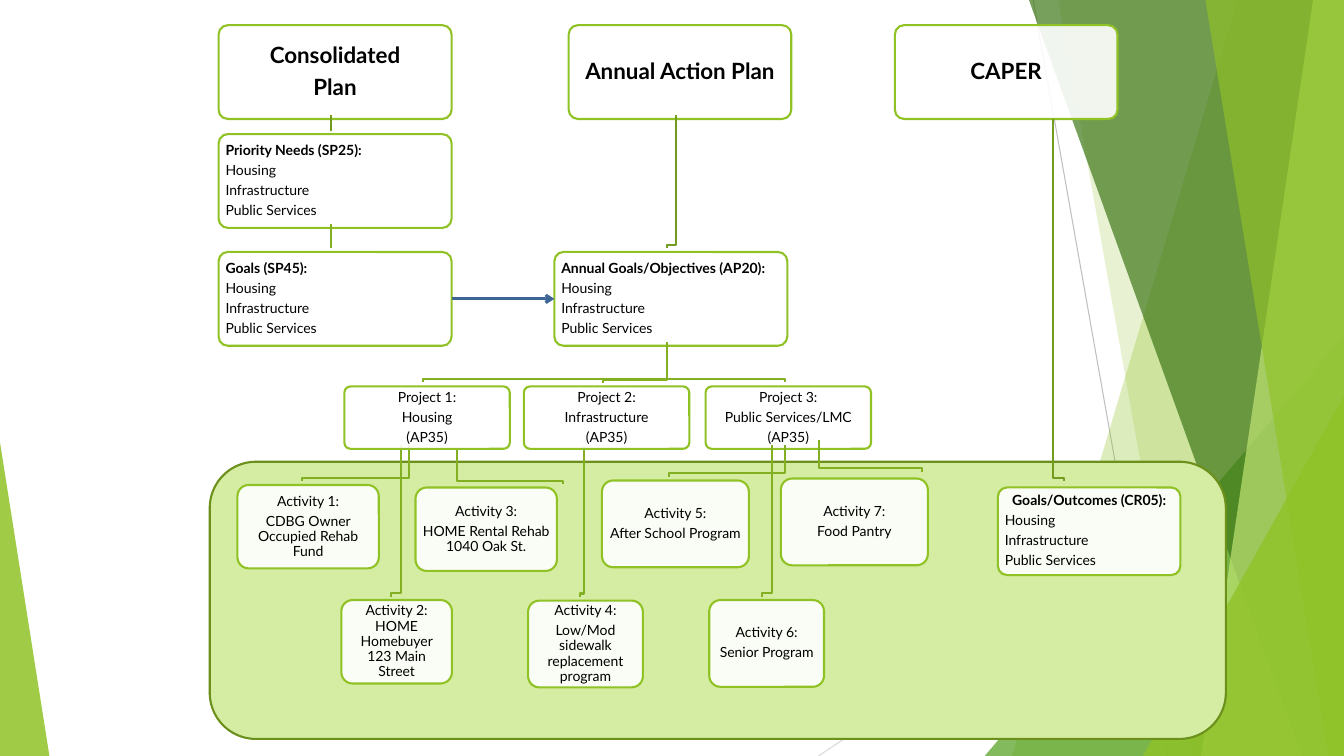
from pptx import Presentation
from pptx import util as u
from pptx.dml.color import RGBColor
from pptx.enum import shapes, text
from pptx.oxml import parse_xml
from pptx.oxml.ns import nsdecls
from lxml import etree

Pt = u.Pt
HUE = {"lime": "90C226", "leaf": "54A021", "pine": "3F7819", "pale": "C0E474",
       "panel": "D5EDA2", "rim": "6B901C", "stem": "739B1E", "twig": "83B022",
       "blue": "3D6696", "white": "FFFFFF", "ink": "000000",
       "gray": "BFBFBF", "mist": "D9D9D9"}
WIDE, HIGH = 960, 540

RAYS = [(738, 0, 833.8, 540, "gray"), (960, 290.2, 584.6, 540, "mist")]
# top x, bottom x | left, top, width, height, apex
FACETS = [((884, 723), "lime", 30), ((756, 852), "lime", 20),
          ((703.4, 239.8, 256.6, 300.2, 1), "leaf", 72),
          ((735, 930), "pine", 70), ((938, 858), "pale", 70), ((861, 949), "lime", 65),
          ((816.5, 283, 143.5, 257, 1), "lime", 80), ((0, 316, 35.3, 224, 0), "lime", 85)]
PANEL = (149.8, 329.8, 725.8, 198)

NEEDS = ["Housing", "Infrastructure", "Public Services"]
TITLES = [(156.2, 166.4, ["Consolidated", "Plan"]), (406.2, 159, ["Annual Action Plan"]),
          (639.2, 159, ["CAPER"])]
LISTS = [(156.2, 95.8, 166.4, 67, "Priority Needs (SP25):", "left"),
         (156.2, 180, 166.4, 67, "Goals (SP45):", "left"),
         (396, 180, 166.4, 67, "Annual Goals/Objectives (AP20):", "left"),
         (712.8, 348.2, 130.4, 62.6, "Goals/Outcomes (CR05):", "mid")]
PROJECTS = [(246, "Housing"), (374.2, "Infrastructure"), (504, "Public Services/LMC")]
ACTS = [(169.6, 346.4, 101, 59.6, ["Activity 1:", "CDBG Owner Occupied Rehab Fund"]),
        (243.8, 428.6, 79, 59.6, ["Activity 2: HOME Homebuyer 123 Main Street"]),
        (296.8, 348.2, 101, 59.6, ["Activity 3:", "HOME Rental Rehab 1040 Oak St."]),
        (377.2, 429, 82, 62, ["Activity 4:", "Low/Mod sidewalk replacement program"]),
        (430, 343.2, 105, 62, ["Activity 5:", "After School Program"]),
        (506.6, 428.6, 82, 62, ["Activity 6:", "Senior Program"]),
        (557.8, 341.8, 105, 62, ["Activity 7:", "Food Pantry"])]
UNDER = [(292, 318, 215.8, 343.6, "twig"), (286.4, 318, 279.4, 426.2, "twig"),
         (326.4, 320.6, 402, 345.8, "twig"), (417, 318.4, 414.2, 426.4, "twig")]
OVER = [(236.4, 82, 236.4, 93.6, "stem"), (236.4, 160, 236.4, 177.2, "twig"),
        (483, 82, 476.4, 177.4, "stem"), (476.4, 244.2, 430.8, 273.8, "twig"),
        (476.4, 244.2, 302.2, 273.2, "twig"), (476.4, 244.2, 560.6, 273.2, "twig"),
        (560.6, 317.6, 478, 340.6, "twig"), (551.4, 317.6, 544.2, 426.2, "twig"),
        (585, 314, 658.6, 337, "twig"), (752.2, 85, 760, 343.6, "stem")]

prs = Presentation()
prs.slide_width, prs.slide_height = Pt(WIDE), Pt(HIGH)
page = prs.slides.add_slide(prs.slide_layouts[6]).shapes


def rgb(name):
    return RGBColor.from_string(HUE[name])


def paint(shape, fill=None, alpha=100, line=None):
    shape.shadow.inherit = False
    if fill:
        shape.fill.solid()
        shape.fill.fore_color.rgb = rgb(fill)
        if alpha < 100:
            tone = shape.fill._xPr.find(".//{*}srgbClr")
            tone.append(parse_xml(f'<a:alpha {nsdecls("a")} val="{alpha * 1000}"/>'))
    else:
        shape.fill.background()
    if line:
        shape.line.color.rgb = rgb(line)
        shape.line.width = Pt(1.5)
    else:
        shape.line.fill.background()


def write(shape, lines, size=10, bold=False, head=False, align="mid", first=None, inset=3):
    frame = shape.text_frame
    frame.word_wrap = True
    frame.vertical_anchor = text.MSO_ANCHOR.MIDDLE
    frame.margin_left = frame.margin_right = Pt(inset)
    frame.margin_top = frame.margin_bottom = Pt(inset)
    sides = {"mid": text.PP_ALIGN.CENTER, "left": text.PP_ALIGN.LEFT}
    for i, words in enumerate(lines):
        para = frame.add_paragraph() if i else frame.paragraphs[0]
        para.alignment = sides[align if i or not first else first]
        para.line_spacing, para.space_after = 0.9, Pt(size * 0.35)
        run = para.add_run()
        run.text = words
        run.font.name, run.font.size = "Lato", Pt(size)
        run.font.bold = bold or (head and i == 0)
        run.font.color.rgb = rgb("ink")


def card(x, y, w, h, lines, curve=6.6, **style):
    box = page.add_shape(shapes.MSO_SHAPE.ROUNDED_RECTANGLE, Pt(x), Pt(y), Pt(w), Pt(h))
    box.adjustments[0] = curve / h
    paint(box, "white", 90, "lime")
    write(box, lines, **style)
    return box


def trace(dots, close):
    pts = [(Pt(x), Pt(y)) for x, y in dots]
    pen = page.build_freeform(*pts[0])
    pen.add_line_segments(pts[1:], close=close)
    return pen.convert_to_shape()


def straight(x, y, x2, y2, hue, width=1.5):
    line = page.add_connector(shapes.MSO_CONNECTOR.STRAIGHT, Pt(x), Pt(y), Pt(x2), Pt(y2))
    line.line.color.rgb, line.line.width = rgb(hue), Pt(width)
    line._element.spPr.append(parse_xml(f'<a:effectLst {nsdecls("a")}/>'))
    return line


def link(x, y, x2, y2, hue):
    if x == x2:
        straight(x, y, x2, y2, hue)
    else:
        bend = y2 - 2.4
        paint(trace([(x, y), (x, bend), (x2, bend), (x2, y2)], False), line=hue)


def main():
    """Draw the plan hierarchy and save it."""
    for ray in RAYS:
        straight(*ray, width=0.75)
    for place, hue, alpha in FACETS:
        if len(place) == 2:
            top, base = place
            facet = trace([(top, 0), (WIDE, 0), (WIDE, HIGH), (base, HIGH)], True)
        else:
            facet = page.add_shape(shapes.MSO_SHAPE.ISOSCELES_TRIANGLE, *map(Pt, place[:4]))
            facet.adjustments[0] = place[4]
        paint(facet, hue, alpha)
    paint(page.add_shape(shapes.MSO_SHAPE.ROUNDED_RECTANGLE, *map(Pt, PANEL)), "panel", line="rim")

    for way in UNDER:
        link(*way)
    for x, w, lines in TITLES:
        card(x, 18, w, 67, lines, size=16, bold=True, inset=4.6)
    goals = [card(x, y, w, h, [name] + NEEDS, head=True, align="left", first=first)
             for x, y, w, h, name, first in LISTS]
    for i, (x, name) in enumerate(PROJECTS, 1):
        card(x, 276, 118.2, 44.6, [f"Project {i}:", name, "(AP35)"], curve=4.4)
    for x, y, w, h, lines in ACTS:
        card(x, y, w, h, lines, curve=8, inset=2.7)
    for way in OVER:
        link(*way)

    arrow = straight(324, 216, 396, 216, "blue", width=2)
    arrow.begin_connect(goals[1], 3)
    arrow.end_connect(goals[2], 1)
    etree.SubElement(arrow.line._get_or_add_ln(), "{http://schemas.openxmlformats.org/drawingml/2006/main}tailEnd", type="arrow")
    prs.save("out.pptx")


if __name__ == "__main__":
    main()
